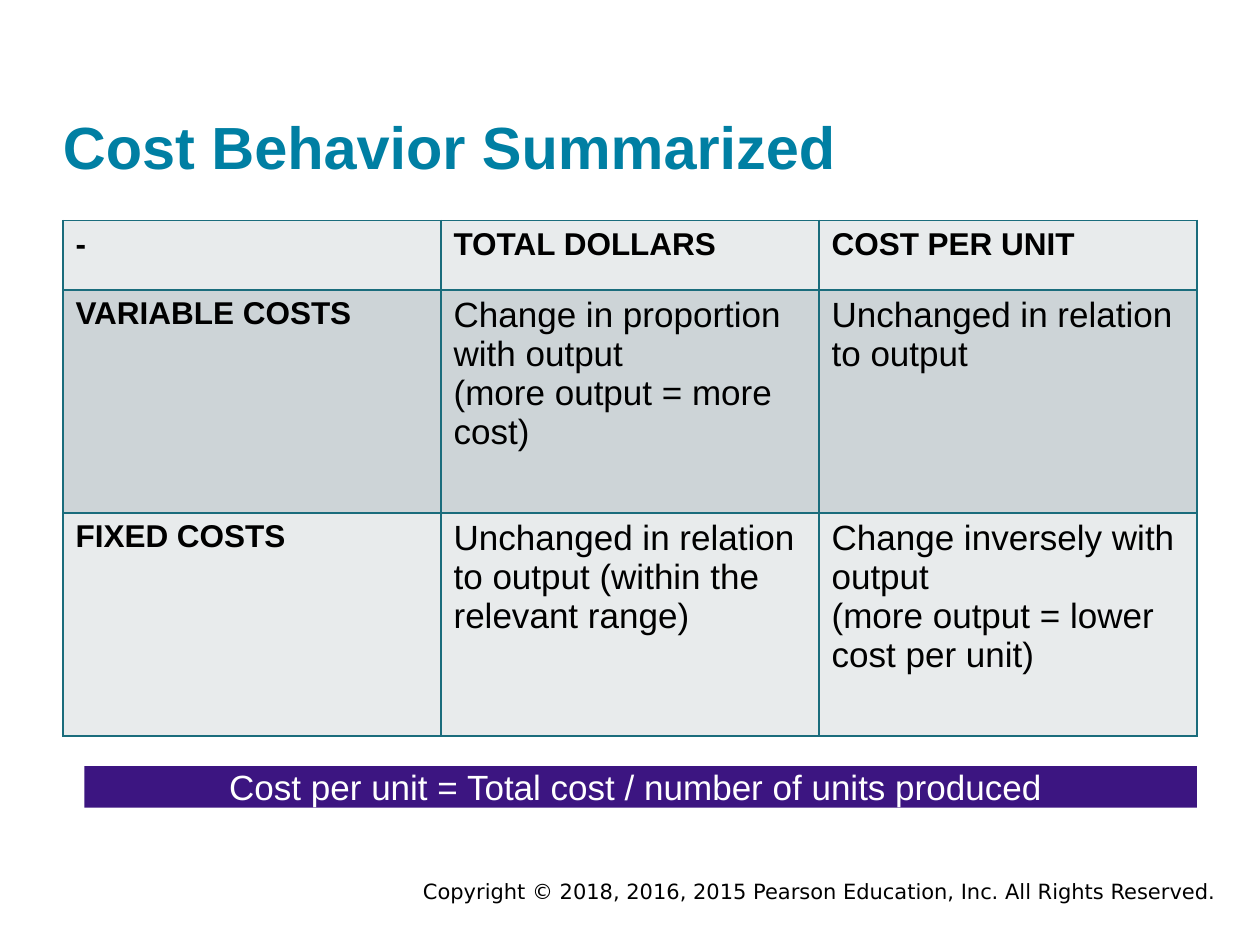
"""Build the cost behavior summary slide."""
from dataclasses import dataclass

from lxml import etree
from pptx import Presentation
from pptx.dml.color import RGBColor
from pptx.enum.shapes import MSO_SHAPE
from pptx.enum.text import MSO_ANCHOR, PP_ALIGN
from pptx.oxml.ns import qn
from pptx.util import Inches, Pt

RECTANGLE = MSO_SHAPE.RECTANGLE
TOP, MIDDLE, BOTTOM = MSO_ANCHOR.TOP, MSO_ANCHOR.MIDDLE, MSO_ANCHOR.BOTTOM
LEFT, CENTER, RIGHT = PP_ALIGN.LEFT, PP_ALIGN.CENTER, PP_ALIGN.RIGHT
BORDER_SIDES = ("a:lnL", "a:lnR", "a:lnT", "a:lnB")


@dataclass(frozen=True)
class TextStyle:
    size: int
    color: str = "000000"
    bold: bool = False
    font: str = "Arial"


@dataclass(frozen=True)
class Theme:
    title: TextStyle = TextStyle(34, "007FA3", True)
    heading: TextStyle = TextStyle(18, bold=True)
    body: TextStyle = TextStyle(20)
    formula: TextStyle = TextStyle(20, "FFFFFF")
    copyright: TextStyle = TextStyle(12, font="DejaVu Sans")
    row_fills: tuple[str, str] = ("E8EBEC", "CDD4D7")
    border: str = "1A6C7C"
    border_width: int = 1
    banner: str = "3C1581"


@dataclass(frozen=True)
class Area:
    left: float
    top: float
    width: float
    height: float

    def lengths(self) -> tuple:
        return tuple(Inches(value) for value in (self.left, self.top, self.width, self.height))


@dataclass(frozen=True)
class CostRow:
    height: float
    cells: tuple[str, str, str]


THEME = Theme()
COST_ROWS = (
    CostRow(0.55, ("-", "TOTAL DOLLARS", "COST PER UNIT")),
    CostRow(1.77, (
        "VARIABLE COSTS",
        "Change in proportion with output\n(more output = more cost)",
        "Unchanged in relation to output",
    )),
    CostRow(1.77, (
        "FIXED COSTS",
        "Unchanged in relation to output (within the relevant range)",
        "Change inversely with output\n(more output = lower cost per unit)",
    )),
)


def write_text(frame, text: str, style: TextStyle, align=LEFT) -> None:
    frame.text = text
    frame.word_wrap = True
    for para in frame.paragraphs:
        para.alignment = align
        for span in para.runs:
            span.font.name = style.font
            span.font.size = Pt(style.size)
            span.font.bold = style.bold
            span.font.color.rgb = RGBColor.from_string(style.color)


def add_text(page, area: Area, text: str, style: TextStyle, align=LEFT, anchor=TOP):
    box = page.shapes.add_textbox(*area.lengths())
    write_text(box.text_frame, text, style, align)
    box.text_frame.vertical_anchor = anchor
    return box


def add_banner(page, area: Area, text: str) -> None:
    banner = page.shapes.add_shape(RECTANGLE, *area.lengths())
    banner.shadow.inherit = False
    banner.fill.solid()
    banner.fill.fore_color.rgb = RGBColor.from_string(THEME.banner)
    banner.line.fill.background()
    write_text(banner.text_frame, text, THEME.formula, CENTER)
    banner.text_frame.vertical_anchor = MIDDLE


def paint_cell(cell, fill: str) -> None:
    properties = cell._tc.get_or_add_tcPr()
    for side in BORDER_SIDES:
        line = etree.SubElement(properties, qn(side), w=str(Pt(THEME.border_width)))
        solid = etree.SubElement(line, qn("a:solidFill"))
        etree.SubElement(solid, qn("a:srgbClr"), val=THEME.border)
    cell.fill.solid()
    cell.fill.fore_color.rgb = RGBColor.from_string(fill)


def add_cost_table(page, area: Area, rows: tuple[CostRow, ...]) -> None:
    column_count = len(rows[0].cells)
    table = page.shapes.add_table(len(rows), column_count, *area.lengths()).table
    for column in table.columns:
        column.width = Inches(area.width / column_count)
    for row_index, row in enumerate(rows):
        table.rows[row_index].height = Inches(row.height)
        for column_index, text in enumerate(row.cells):
            cell = table.cell(row_index, column_index)
            is_heading = row_index == 0 or column_index == 0
            write_text(cell.text_frame, text, THEME.heading if is_heading else THEME.body)
            paint_cell(cell, THEME.row_fills[row_index % 2])


def main() -> None:
    deck = Presentation()
    deck.slide_width, deck.slide_height = Inches(10), Inches(7.5)
    page = deck.slides.add_slide(deck.slide_layouts[6])
    add_text(
        page, Area(1.92, 6.92, 7.83, 0.3),
        "Copyright © 2018, 2016, 2015 Pearson Education, Inc. All Rights Reserved.",
        THEME.copyright, RIGHT,
    )
    title = add_text(
        page, Area(0.5, 0.24, 9, 1.2), "Cost Behavior Summarized", THEME.title, anchor=BOTTOM
    )
    frame = title.text_frame
    frame.margin_left = frame.margin_right = frame.margin_top = frame.margin_bottom = 0
    table_height = sum(row.height for row in COST_ROWS)
    add_cost_table(page, Area(0.5, 1.75, 9, table_height), COST_ROWS)
    add_banner(
        page, Area(0.67, 6.08, 8.83, 0.33),
        "Cost per unit = Total cost / number of units produced ",
    )
    deck.save("out.pptx")


if __name__ == "__main__":
    main()
